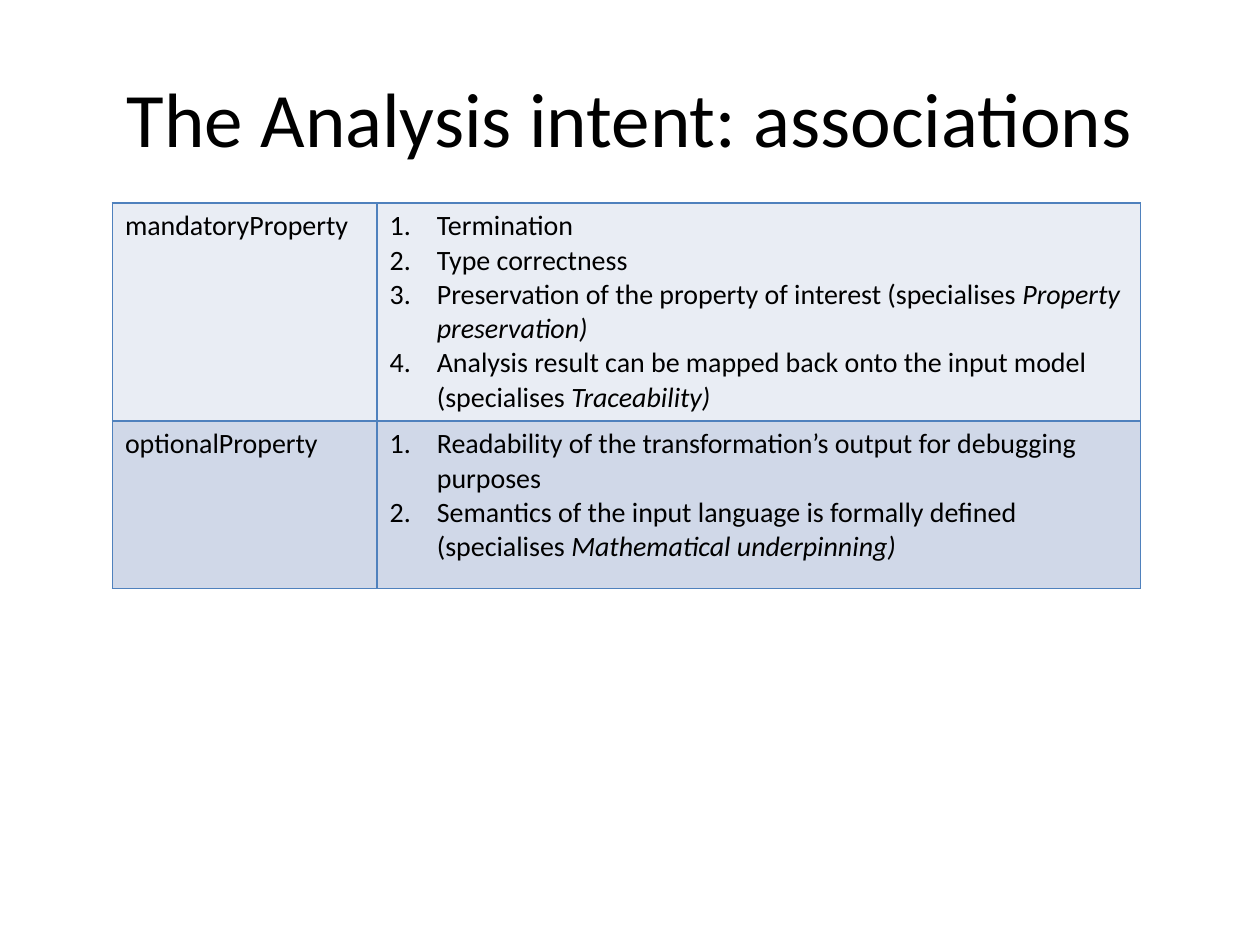
from dataclasses import dataclass

from lxml.etree import SubElement
from pptx import Presentation
from pptx.dml.color import RGBColor as RGB
from pptx.enum.text import MSO_ANCHOR as Anchor, PP_ALIGN as Align
from pptx.oxml.ns import qn
from pptx.util import Pt


@dataclass(frozen=True)
class Theme:
    font: str = "Calibri"
    title_size: float = 44
    body_size: float = 16
    text: str = "000000"
    border: str = "4F81BD"
    border_width: float = 1
    row_fills: tuple = ("E9EDF4", "D0D8E8")
    list_indent: float = 27


# Each list item is plain text followed by an optional italic ending
PROPERTIES = [
    ("mandatoryProperty", [
        ("Termination", ""),
        ("Type correctness", ""),
        ("Preservation of the property of interest (specialises ",
         "Property preservation)"),
        ("Analysis result can be mapped back onto the input model (specialises ",
         "Traceability)"),
    ]),
    ("optionalProperty", [
        ("Readability of the transformation’s output for debugging purposes", ""),
        ("Semantics of the input language is formally defined (specialises ",
         "Mathematical underpinning)"),
    ]),
]
COLUMN_WIDTHS = (151.2, 436.3)
ROW_HEIGHTS = (124.5, 95.75)


class SlideBuilder:
    def __init__(self, page, theme):
        self.page = page
        self.theme = theme

    def style_runs(self, para, size):
        for span in para.runs:
            span.font.name = self.theme.font
            span.font.size = Pt(size)
            span.font.color.rgb = RGB.from_string(self.theme.text)

    def title(self, text, left, top, width, height):
        box = self.page.shapes.title
        box.left, box.top, box.width, box.height = map(Pt, (left, top, width, height))
        frame = box.text_frame
        frame.text = text
        frame.vertical_anchor = Anchor.MIDDLE
        para = frame.paragraphs[0]
        para.alignment = Align.CENTER
        self.style_runs(para, self.theme.title_size)

    def number(self, para):
        indent = Pt(self.theme.list_indent)
        props = para._p.get_or_add_pPr()
        props.set("marL", str(indent))
        props.set("indent", str(-indent))
        SubElement(props, qn("a:buFont"), typeface="+mj-lt")
        SubElement(props, qn("a:buAutoNum"), type="arabicPeriod")

    def numbered_list(self, frame, items):
        for index, (plain, italic) in enumerate(items):
            para = frame.add_paragraph() if index else frame.paragraphs[0]
            para.text = plain
            if italic:
                span = para.add_run()
                span.text = italic
                span.font.italic = True
            self.number(para)
            self.style_runs(para, self.theme.body_size)

    def format_cell(self, cell, fill):
        # Borders come before the fill in the cell properties
        props = cell._tc.get_or_add_tcPr()
        for side in ("lnL", "lnR", "lnT", "lnB"):
            line = SubElement(props, qn(f"a:{side}"), w=str(Pt(self.theme.border_width)))
            solid = SubElement(line, qn("a:solidFill"))
            SubElement(solid, qn("a:srgbClr"), val=self.theme.border)
        cell.fill.solid()
        cell.fill.fore_color.rgb = RGB.from_string(fill)

    def property_table(self, rows, left, top, widths, heights):
        table = self.page.shapes.add_table(
            len(rows), len(widths), Pt(left), Pt(top),
            Pt(sum(widths)), Pt(sum(heights))).table
        table.first_row = False
        for column, width in zip(table.columns, widths):
            column.width = Pt(width)
        for row, height, fill, (name, items) in zip(
                table.rows, heights, self.theme.row_fills, rows):
            row.height = Pt(height)
            name_cell, list_cell = row.cells
            name_cell.text_frame.text = name
            self.style_runs(name_cell.text_frame.paragraphs[0], self.theme.body_size)
            self.numbered_list(list_cell.text_frame, items)
            for cell in (name_cell, list_cell):
                self.format_cell(cell, fill)


def main():
    deck = Presentation()
    deck.slide_width, deck.slide_height = Pt(720), Pt(540)
    page = deck.slides.add_slide(deck.slide_layouts[5])
    builder = SlideBuilder(page, Theme())

    # Title
    builder.title("The Analysis intent: associations", 36, 21.6, 648, 90)
    # Associations by kind of property
    builder.property_table(PROPERTIES, 64.25, 116, COLUMN_WIDTHS, ROW_HEIGHTS)

    deck.save("out.pptx")


if __name__ == "__main__":
    main()
